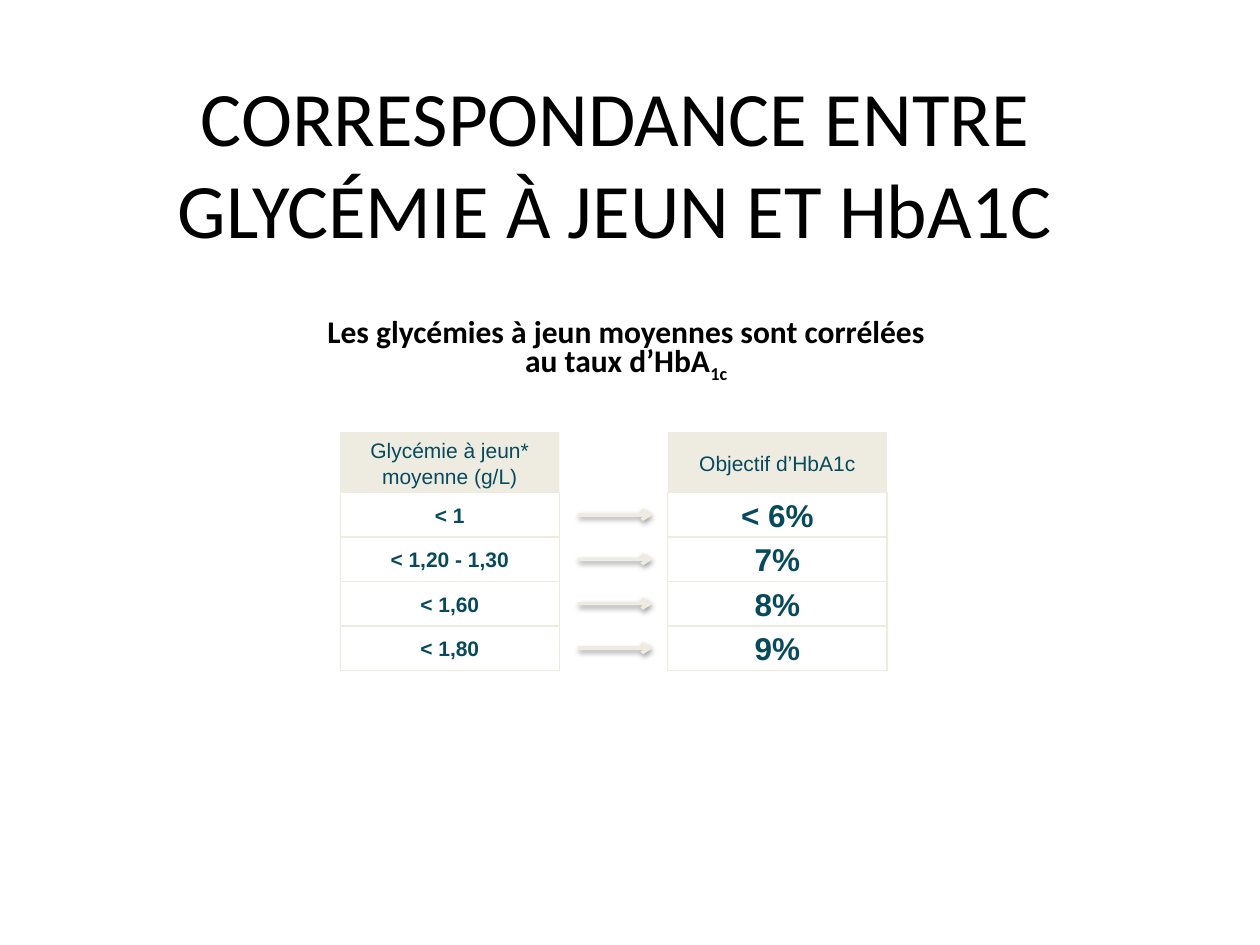
from lxml import etree
from pptx import Presentation
from pptx.dml.color import RGBColor as RGB
from pptx.enum.shapes import MSO_CONNECTOR as Link, MSO_SHAPE as Kind
from pptx.enum.text import MSO_ANCHOR as Anchor, PP_ALIGN as Align
from pptx.oxml import parse_xml
from pptx.oxml.ns import nsdecls, qn
from pptx.util import Inches, Pt

HEX = {"ink": "000000", "teal": "074A5C", "sand": "EEECE1", "white": "FFFFFF"}
COL = {name: RGB.from_string(code) for name, code in HEX.items()}


def write(para, text, color, **style):
    para.alignment = Align.CENTER
    run = para.add_run()
    run.text = text
    run.font.color.rgb = COL[color]
    for key, value in style.items():
        setattr(run.font, key, value)
    return run


def add_box(left, top, width, height):
    frame = page.shapes.add_textbox(
        Inches(left), Inches(top), Inches(width), Inches(height)).text_frame
    frame.word_wrap = True
    return frame.paragraphs[0]


deck = Presentation()
deck.slide_width, deck.slide_height = Inches(10), Inches(7.5)
page = deck.slides.add_slide(deck.slide_layouts[6])

note = add_box(1.93, 2.46, 6.08, 0.54)
note.line_spacing, note.space_before = Pt(19.5), Pt(3.6)
bold = {"name": "Calibri", "size": Pt(18), "bold": True}
write(note, "Les glycémies à jeun moyennes sont corrélées", "ink", **bold)
note.add_line_break()
write(note, "au taux d’HbA", "ink", **bold)
sub = write(note, "1c", "ink", **bold)
sub.font._element.set("baseline", "-25000")

title = add_box(1.24, 0.5, 7.29, 1.58)
write(title, "CORRESPONDANCE ENTRE GLYCÉMIE À JEUN ET HbA1C", "ink",
      name="Calibri", size=Pt(44))

HEAD, TOP, TALL, WIDE = 3.43, 3.91, 1.41 / 4, 1.74
columns = [
    (2.7, 12, ["Glycémie à jeun* moyenne (g/L)",
               "< 1", "< 1,20 - 1,30", "< 1,60", "< 1,80"]),
    (5.3, 18, ["Objectif d’HbA1c", "< 6%", "7%", "8%", "9%"]),
]
for left, size, texts in columns:
    group = page.shapes.add_group_shape()
    for row, text in enumerate(texts):
        head = row == 0
        top = HEAD if head else TOP + (row - 1) * TALL
        cell = group.shapes.add_shape(
            Kind.RECTANGLE, Inches(left), Inches(top),
            Inches(WIDE), Inches(0.49 if head else TALL))
        cell.shadow.inherit = False
        cell.fill.solid()
        cell.fill.fore_color.rgb = COL["sand" if head else "white"]
        if head:
            cell.line.fill.background()
        else:
            cell.line.color.rgb = COL["sand"]
            cell.line.width = Pt(0.75)
        frame = cell.text_frame
        frame.word_wrap = True
        frame.vertical_anchor = Anchor.MIDDLE
        write(frame.paragraphs[0], text, "teal", name="Arial",
              size=Pt(12 if head else size), bold=not head)

SHADOW = (
    f'<a:effectLst {nsdecls("a")}>'
    '<a:outerShdw blurRad="40000" dist="20000" dir="5400000" rotWithShape="0">'
    '<a:srgbClr val="000000"><a:alpha val="38000"/></a:srgbClr>'
    '</a:outerShdw></a:effectLst>')
for row in range(4):
    mid = Inches(TOP + (row + 0.5) * TALL)
    arrow = page.shapes.add_connector(
        Link.STRAIGHT, Inches(4.59), mid, Inches(5.18), mid)
    arrow.line.color.rgb = COL["sand"]
    arrow.line.width = Pt(2)
    etree.SubElement(arrow.line._get_or_add_ln(), qn("a:tailEnd"), type="arrow")
    arrow._element.spPr.append(parse_xml(SHADOW))

deck.save("out.pptx")
